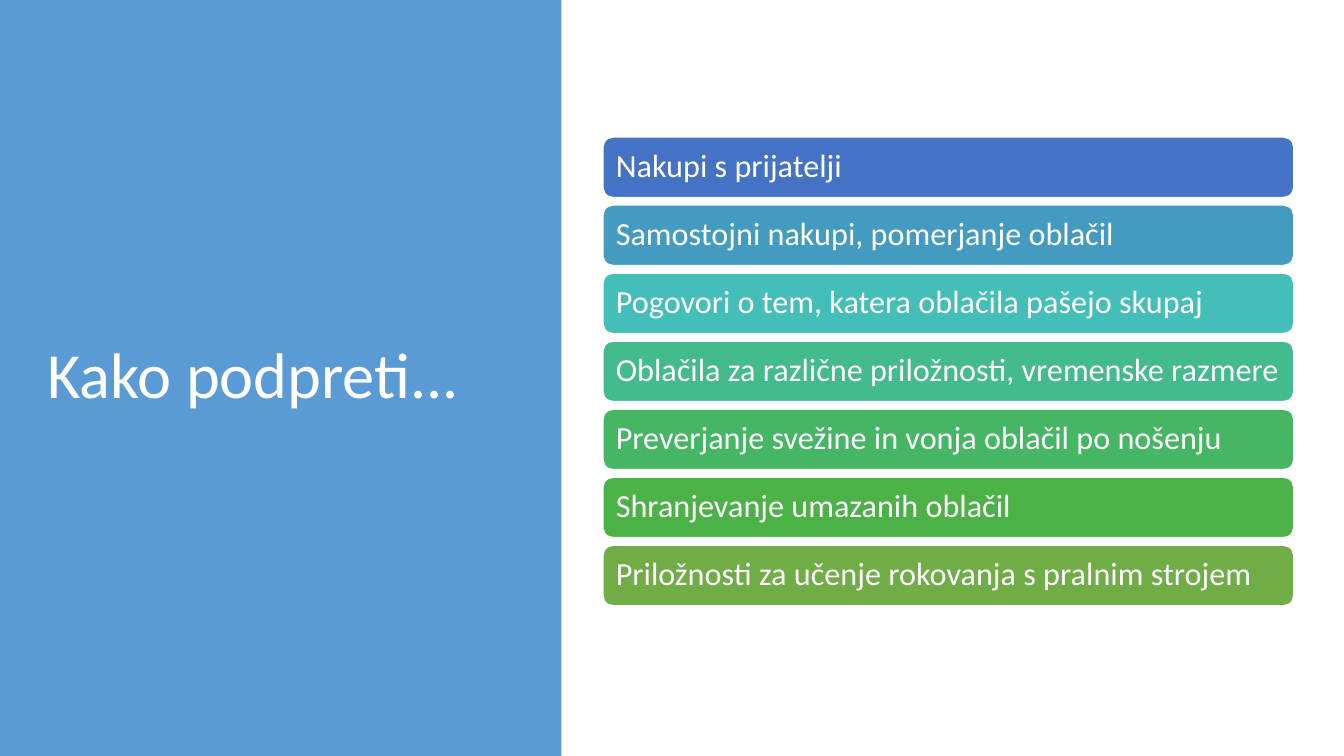
from pptx import Presentation
from pptx.dml.color import RGBColor
from pptx.enum.shapes import MSO_SHAPE
from pptx.enum.text import MSO_ANCHOR, PP_ALIGN
from pptx.util import Inches, Pt

WHITE = "FFFFFF"
PANEL_BLUE = "5B9BD5"

# Grid of 100 columns by 100 rows: the stacked bars
BAR_LEFT, BAR_WIDTH = 44.86, 51.4
FIRST_BAR_TOP, BAR_HEIGHT, BAR_PITCH = 18.13, 8, 9

SUPPORT_IDEAS = [
    ("Nakupi s prijatelji", "4472C4"),
    ("Samostojni nakupi, pomerjanje oblačil", "449BC1"),
    ("Pogovori o tem, katera oblačila pašejo skupaj", "43BEB9"),
    ("Oblačila za različne priložnosti, vremenske razmere", "43BB8D"),
    ("Preverjanje svežine in vonja oblačil po nošenju", "45B664"),
    ("Shranjevanje umazanih oblačil", "4CB146"),
    ("Priložnosti za učenje rokovanja s pralnim strojem", "70AD47"),
]


def color(hex_code):
    return RGBColor.from_string(hex_code)


class SlideBuilder:
    """Holds the text style, the grid and the current slide."""

    font_name = "Calibri"
    title_size = 46
    bar_size = 23

    def __init__(self, deck):
        self.column = deck.slide_width / 100
        self.row = deck.slide_height / 100
        self.slide = deck.slides.add_slide(deck.slide_layouts[6])

    def place(self, left, top, width, height):
        return (round(left * self.column), round(top * self.row),
                round(width * self.column), round(height * self.row))

    def add_text(self, box, text, size):
        frame = box.text_frame
        frame.word_wrap = True
        frame.vertical_anchor = MSO_ANCHOR.MIDDLE
        para = frame.paragraphs[0]
        para.alignment = PP_ALIGN.LEFT
        para.line_spacing = 0.9
        span = para.add_run()
        span.text = text
        span.font.name = self.font_name
        span.font.size = Pt(size)
        span.font.color.rgb = color(WHITE)

    def panel(self, area, fill, preset=MSO_SHAPE.RECTANGLE):
        shape = self.slide.shapes.add_shape(preset, *self.place(*area))
        shape.shadow.inherit = False
        shape.fill.solid()
        shape.fill.fore_color.rgb = color(fill)
        shape.line.fill.background()
        return shape

    def bar(self, area, fill, text):
        shape = self.panel(area, fill, MSO_SHAPE.ROUNDED_RECTANGLE)
        shape.line.color.rgb = color(WHITE)
        shape.line.width = Pt(1)
        frame = shape.text_frame
        frame.margin_left = frame.margin_right = Inches(0.1)
        frame.margin_top = frame.margin_bottom = Inches(0.05)
        self.add_text(shape, text, self.bar_size)

    def title(self, area, text):
        box = self.slide.shapes.add_textbox(*self.place(*area))
        self.add_text(box, text, self.title_size)


def main():
    deck = Presentation()
    deck.slide_width, deck.slide_height = Inches(13.33), Inches(7.5)
    builder = SlideBuilder(deck)

    # Stack of ideas on the right
    for index, (text, fill) in enumerate(SUPPORT_IDEAS):
        top = FIRST_BAR_TOP + index * BAR_PITCH
        builder.bar((BAR_LEFT, top, BAR_WIDTH, BAR_HEIGHT), fill, text)

    # Title panel on the left
    builder.panel((0, 0, 41.77, 100), PANEL_BLUE)
    builder.title((2.78, 9.87, 34.65, 80.27), "Kako podpreti...")

    deck.save("out.pptx")


if __name__ == "__main__":
    main()
